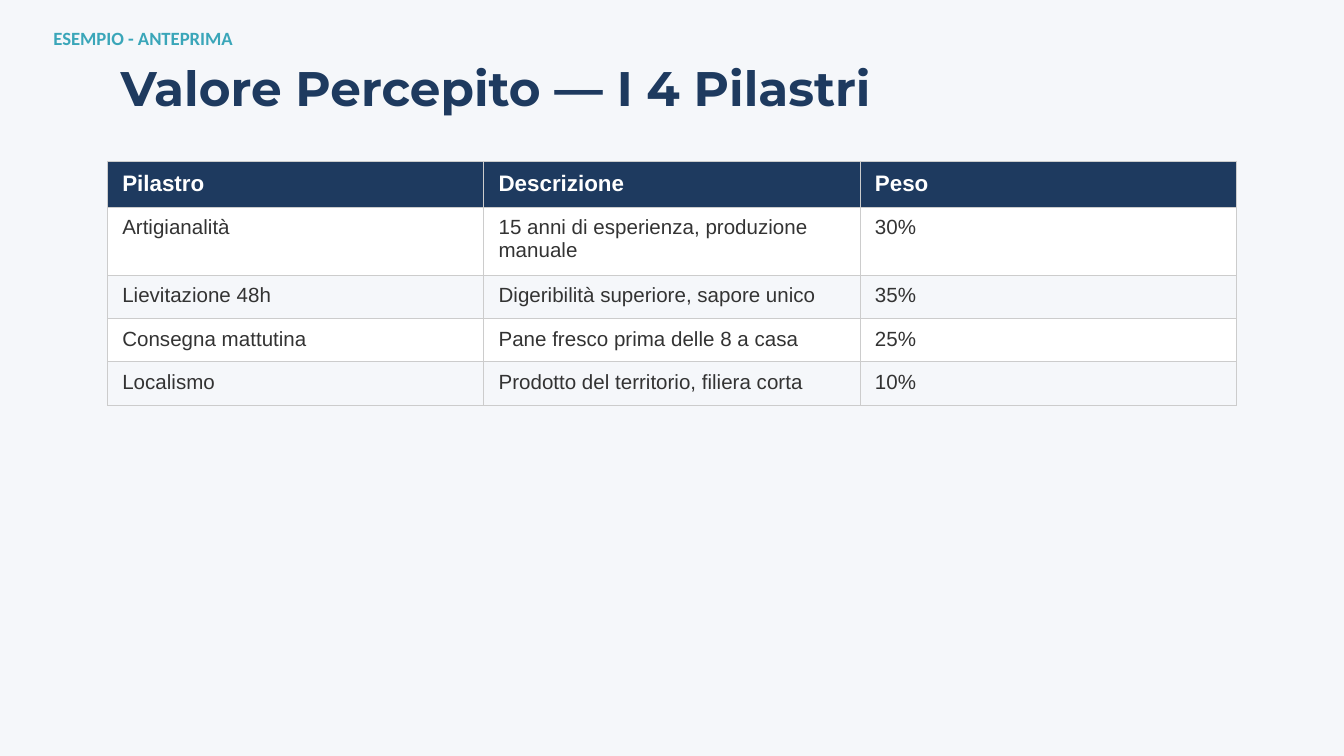
import pptx
import pptx.dml.color
import pptx.enum.text
import pptx.oxml.ns
import pptx.util
from lxml import etree

Inches = pptx.util.Inches
Pt = pptx.util.Pt
RGB = pptx.dml.color.RGBColor

NAVY = RGB(0x1E, 0x3A, 0x5F)
TEAL = RGB(0x3A, 0xA6, 0xB9)
PALE = RGB(0xF5, 0xF7, 0xFA)
WHITE = RGB(0xFF, 0xFF, 0xFF)
INK = RGB(0x33, 0x33, 0x33)
GREY = RGB(0xCC, 0xCC, 0xCC)

ROWS = [
    ("Pilastro", "Descrizione", "Peso"),
    ("Artigianalità", "15 anni di esperienza, produzione manuale", "30%"),
    ("Lievitazione 48h", "Digeribilità superiore, sapore unico", "35%"),
    ("Consegna mattutina", "Pane fresco prima delle 8 a casa", "25%"),
    ("Localismo", "Prodotto del territorio, filiera corta", "10%"),
]


def style(frame, text, font, size, color, bold):
    para = frame.paragraphs[0]
    para.text = text
    para.font.name = font
    para.font.size = Pt(size)
    para.font.bold = bold
    para.font.color.rgb = color


def add_label(slide, box, text, font, size, color, anchor):
    frame = slide.shapes.add_textbox(*map(Inches, box)).text_frame
    frame.word_wrap = True
    frame.vertical_anchor = anchor
    style(frame, text, font, size, color, True)


def add_border(cell, color, width):
    props = cell._tc.get_or_add_tcPr()
    qn = pptx.oxml.ns.qn
    for side in ("lnL", "lnR", "lnT", "lnB"):
        line = etree.SubElement(props, qn("a:" + side), w=str(Pt(width)))
        fill = etree.SubElement(line, qn("a:solidFill"))
        etree.SubElement(fill, qn("a:srgbClr"), val=str(color))


def add_grid(slide, box, rows):
    shape = slide.shapes.add_table(len(rows), len(rows[0]), *map(Inches, box))
    for r, row in enumerate(rows):
        head = r == 0
        back = NAVY if head else WHITE if r % 2 else PALE
        for c, text in enumerate(row):
            cell = shape.table.cell(r, c)
            cell.margin_left = cell.margin_right = Inches(0.11)
            cell.margin_top = cell.margin_bottom = Inches(0.07)
            add_border(cell, GREY, 0.5)
            cell.fill.solid()
            cell.fill.fore_color.rgb = back
            style(cell.text_frame, text, "Arial", 12 if head else 11,
                  WHITE if head else INK, head)


def main():
    deck = pptx.Presentation()
    # Widescreen, 16:9
    deck.slide_width = Inches(10)
    deck.slide_height = deck.slide_width * 9 // 16
    slide = deck.slides.add_slide(deck.slide_layouts[6])
    slide.background.fill.solid()
    slide.background.fill.fore_color.rgb = PALE
    anchor = pptx.enum.text.MSO_ANCHOR

    # Title
    add_label(slide, (0.8, 0.3, 8.4, 0.7), "Valore Percepito — I 4 Pilastri",
              "Montserrat", 26, NAVY, anchor.MIDDLE)
    # Table of pillars; rows grow to fit their text
    add_grid(slide, (0.8, 1.2, 8.4, 1), ROWS)
    # Preview tag
    add_label(slide, (0.3, 0.15, 3, 0.35), "ESEMPIO - ANTEPRIMA",
              "Calibri", 10, TEAL, anchor.TOP)

    deck.save("out.pptx")


if __name__ == "__main__":
    main()
